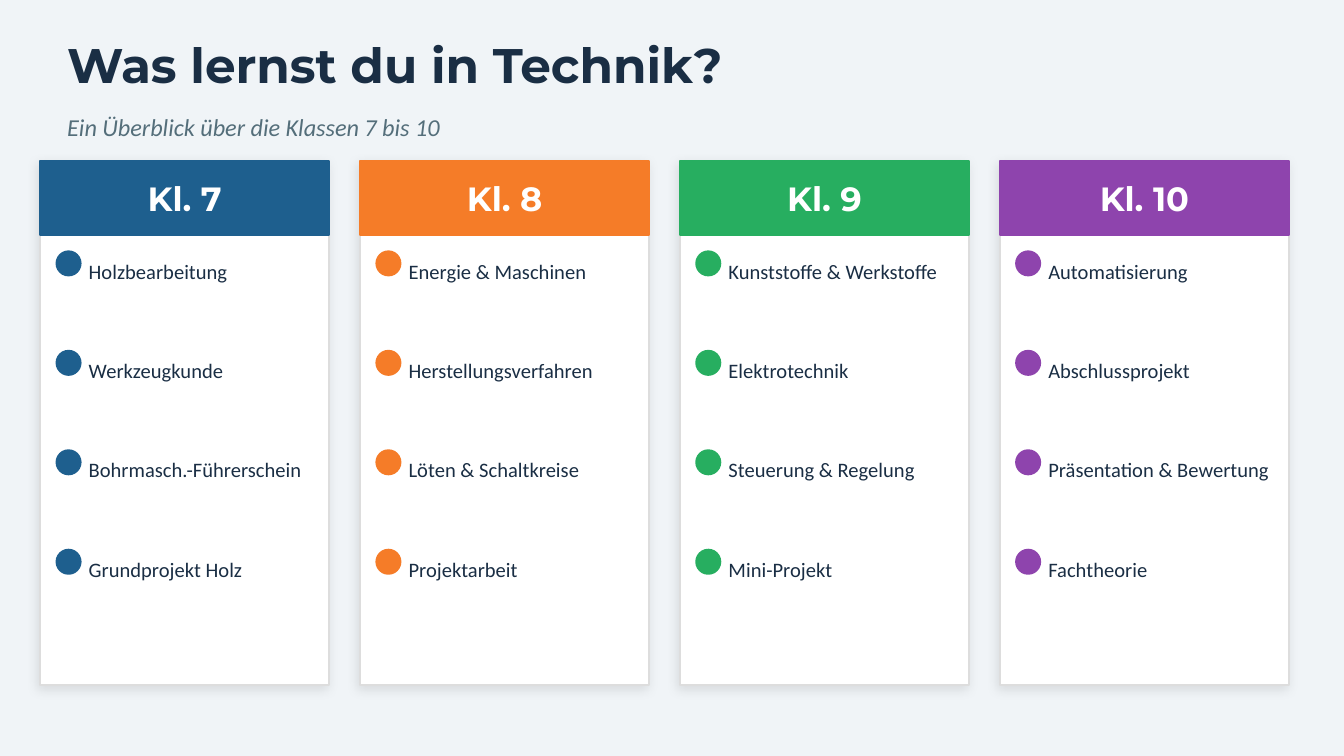
from lxml import etree
from pptx import Presentation
from pptx.dml.color import RGBColor
from pptx.enum.shapes import MSO_SHAPE
from pptx.enum.text import MSO_ANCHOR, MSO_AUTO_SIZE, PP_ALIGN
from pptx.oxml.ns import qn
from pptx.util import Inches, Pt

RECTANGLE, OVAL = MSO_SHAPE.RECTANGLE, MSO_SHAPE.OVAL
MIDDLE, NO_AUTOFIT = MSO_ANCHOR.MIDDLE, MSO_AUTO_SIZE.NONE
LEFT, CENTER = PP_ALIGN.LEFT, PP_ALIGN.CENTER

NAVY, GREY, WHITE = "1A2E44", "546E7A", "FFFFFF"
CLASSES = [
    ("Kl. 7", "1E5F8E", ["Holzbearbeitung", "Werkzeugkunde",
                         "Bohrmasch.-Führerschein", "Grundprojekt Holz"]),
    ("Kl. 8", "F57C28", ["Energie & Maschinen", "Herstellungsverfahren",
                         "Löten & Schaltkreise", "Projektarbeit"]),
    ("Kl. 9", "27AE60", ["Kunststoffe & Werkstoffe", "Elektrotechnik",
                         "Steuerung & Regelung", "Mini-Projekt"]),
    ("Kl. 10", "8E44AD", ["Automatisierung", "Abschlussprojekt",
                          "Präsentation & Bewertung", "Fachtheorie"]),
]
CARD_LEFT, CARD_TOP, CARD_WIDTH, CARD_HEIGHT = 0.3, 1.2, 2.15, 3.9
CARD_STEP, HEADER_HEIGHT = 2.38, 0.55
TOPIC_TOP, TOPIC_STEP, DOT_SIZE = 1.84, 0.74, 0.18


def write(holder, box, text, size, color, font="Calibri", align=LEFT, bold=False, italic=False):
    holder.left, holder.top, holder.width, holder.height = [Inches(length) for length in box]
    frame = holder.text_frame
    frame.text = text
    frame.word_wrap = True
    frame.auto_size = NO_AUTOFIT
    frame.vertical_anchor = MIDDLE
    frame.margin_left = frame.margin_right = frame.margin_top = frame.margin_bottom = 0
    paragraph = frame.paragraphs[0]
    paragraph.alignment = align
    paragraph.font.name = font
    paragraph.font.size = Pt(size)
    paragraph.font.bold = bold
    paragraph.font.italic = italic
    paragraph.font.color.rgb = RGBColor.from_string(color)


def add_block(kind, left, top, width, height, fill, line):
    block = slide.shapes.add_shape(kind, Inches(left), Inches(top), Inches(width), Inches(height))
    block.shadow.inherit = False
    block.fill.solid()
    block.fill.fore_color.rgb = RGBColor.from_string(fill)
    block.line.color.rgb = RGBColor.from_string(line)
    block.line.width = Pt(1)
    return block


prs = Presentation()
prs.slide_width = Inches(10)
prs.slide_height = Inches(10 * 9 / 16)
slide = prs.slides.add_slide(prs.slide_layouts[5])
slide.background.fill.solid()
slide.background.fill.fore_color.rgb = RGBColor.from_string("F0F4F7")

write(slide.shapes.title, (0.5, 0.2, 9, 0.55), "Was lernst du in Technik?", 26, NAVY,
      font="Montserrat", bold=True)
subtitle = slide.shapes.add_textbox(0, 0, 0, 0)
write(subtitle, (0.5, 0.77, 9, 0.35), "Ein Überblick über die Klassen 7 bis 10", 13, GREY, italic=True)

for column, (class_name, color, topics) in enumerate(CLASSES):
    left = CARD_LEFT + column * CARD_STEP

    card = add_block(RECTANGLE, left, CARD_TOP, CARD_WIDTH, CARD_HEIGHT, WHITE, "DDDDDD")
    effects = card.element.spPr.find(qn("a:effectLst"))
    shadow = etree.SubElement(effects, qn("a:outerShdw"), blurRad=str(Pt(6)), dist=str(Pt(2)),
                              dir=str(135 * 60000), algn="bl", rotWithShape="0")
    shade = etree.SubElement(shadow, qn("a:srgbClr"), val="000000")
    etree.SubElement(shade, qn("a:alpha"), val="10000")

    add_block(RECTANGLE, left, CARD_TOP, CARD_WIDTH, HEADER_HEIGHT, color, color)
    heading = slide.shapes.add_textbox(0, 0, 0, 0)
    write(heading, (left + 0.05, CARD_TOP, CARD_WIDTH - 0.1, HEADER_HEIGHT), class_name, 18, WHITE,
          font="Montserrat", align=CENTER, bold=True)

    for row, topic in enumerate(topics):
        top = TOPIC_TOP + row * TOPIC_STEP
        add_block(OVAL, left + 0.12, top + 0.03, DOT_SIZE, DOT_SIZE, color, color)
        label = slide.shapes.add_textbox(0, 0, 0, 0)
        write(label, (left + 0.36, top, 1.72, 0.35), topic, 11, NAVY)

prs.save("out.pptx")
